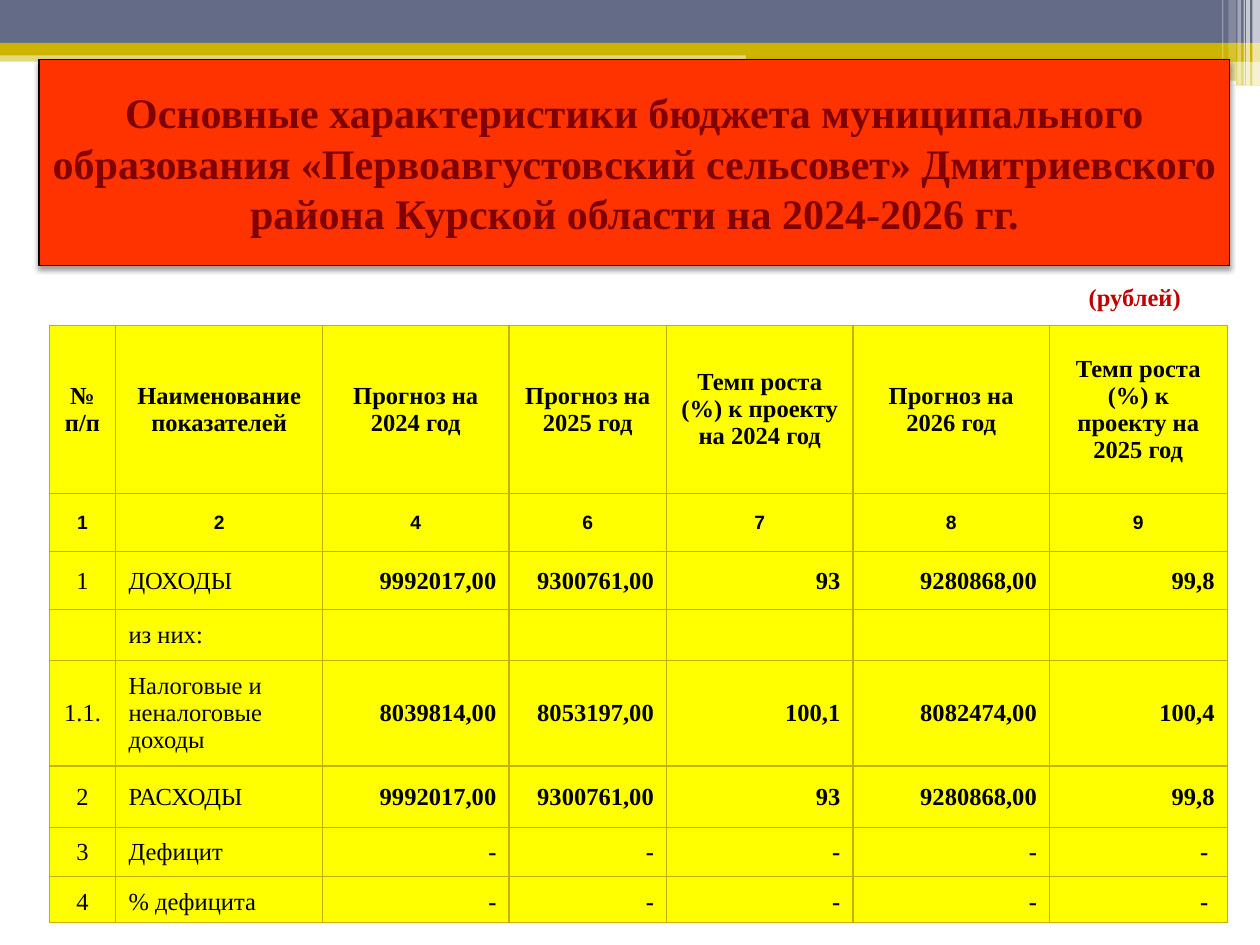
from lxml import etree
from pptx import Presentation
from pptx.dml.color import RGBColor
from pptx.enum import shapes, text
from pptx.oxml import ns
from pptx.util import Inches, Pt

SERIF = "Times New Roman"
SLATE, GOLD, WHITE, YELLOW, GRID = "646B86", "CCB400", "FFFFFF", "FFFF00", "C8B000"
LEFT, CENTER, RIGHT = text.PP_ALIGN.LEFT, text.PP_ALIGN.CENTER, text.PP_ALIGN.RIGHT

TITLE = ("Основные характеристики бюджета муниципального образования "
         "«Первоавгустовский сельсовет» Дмитриевского района Курской области на 2024-2026 гг.")
UNIT = "(рублей)"

# left, top, width, height, colour, opacity in percent
BANDS = [
    (0, 0.4, 10, 0.09, GOLD, 50),
    (0, 0, 10, 0.34, SLATE, 100),
    (0, 0.34, 10, 0.1, GOLD, 100),
    (5.92, 0.39, 4.08, 0.1, GOLD, 100),
    (5.92, 0.48, 4.08, 0.2, GOLD, 50),
    (8.06, 0.64, 1.75, 0.04, WHITE, 100),
]
# left, width, height, opacity of the white stripes in the corner
STRIPES = [
    (9.94, 0.06, 0.68, 65), (9.89, 0.03, 0.68, 65), (9.87, 0.01, 0.68, 60),
    (9.82, 0.03, 0.68, 40), (9.75, 0.06, 0.64, 20), (9.7, 0.01, 0.64, 30),
]

COLUMNS = [0.53, 1.64, 1.48, 1.25, 1.48, 1.56, 1.41]
ROW_HEIGHTS = [1.34, 0.46, 0.46, 0.39, 0.84, 0.49, 0.39, 0.36]
TOTALS = ["9992017,00", "9300761,00", "93", "9280868,00", "99,8"]
ROWS = [
    ["№ п/п", "Наименование показателей", "Прогноз на 2024 год", "Прогноз на 2025 год",
     "Темп роста (%) к проекту на 2024 год", "Прогноз на 2026 год",
     "Темп роста (%) к проекту на 2025 год"],
    ["1", "2", "4", "6", "7", "8", "9"],
    ["1", "ДОХОДЫ"] + TOTALS,
    ["", "из них:"] + [""] * 5,
    ["1.1.", "Налоговые и неналоговые доходы",
     "8039814,00", "8053197,00", "100,1", "8082474,00", "100,4"],
    ["2", "РАСХОДЫ"] + TOTALS,
    ["3", "Дефицит"] + ["-"] * 5,
    ["4", "% дефицита"] + ["-"] * 5,
]


def rgb(colour):
    return RGBColor.from_string(colour)


def paint(fill, colour):
    fill.solid()
    fill.fore_color.rgb = rgb(colour)


def write(frame, words, align, colour="000000", **font_values):
    paragraph = frame.paragraphs[0]
    paragraph.alignment = align
    run = paragraph.add_run()
    run.text = words
    run.font.color.rgb = rgb(colour)
    for name, value in font_values.items():
        setattr(run.font, name, value)


def add_band(slide, left, top, width, height, colour, opacity):
    kind = shapes.MSO_SHAPE.RECTANGLE
    band = slide.shapes.add_shape(kind, *map(Inches, (left, top, width, height)))
    band.shadow.inherit = False
    band.line.fill.background()
    paint(band.fill, colour)
    if opacity < 100:
        colour_element = band.element.find(".//" + ns.qn("a:srgbClr"))
        etree.SubElement(colour_element, ns.qn("a:alpha"), val=str(opacity * 1000))


def add_title(slide):
    title = slide.shapes.title
    title.left, title.top, title.width, title.height = map(Inches, (0.31, 0.47, 9.45, 1.64))
    paint(title.fill, "FF3300")
    title.line.color.rgb = rgb("000000")
    title.line.width = Pt(0.75)
    frame = title.text_frame
    frame.word_wrap = True
    frame.auto_size = text.MSO_AUTO_SIZE.NONE
    frame.vertical_anchor = text.MSO_ANCHOR.MIDDLE
    write(frame, TITLE, CENTER, "800000", name=SERIF, size=Pt(24), bold=True)

    effects = etree.SubElement(title.element.spPr, ns.qn("a:effectLst"))
    shadow = etree.SubElement(effects, ns.qn("a:outerShdw"), blurRad=str(Pt(3.1)),
                              dist=str(Pt(1.6)), dir=str(90 * 60000), rotWithShape="0")
    shade = etree.SubElement(shadow, ns.qn("a:srgbClr"), val="000000")
    etree.SubElement(shade, ns.qn("a:alpha"), val="38000")
    title.element.getparent().append(title.element)  # in front of the bands


def add_borders(cell):
    """Put a thin line on every side; borders must precede the fill in tcPr."""
    properties = cell._tc.get_or_add_tcPr()
    for position, side in enumerate(("a:lnL", "a:lnR", "a:lnT", "a:lnB")):
        line = etree.Element(ns.qn(side), w=str(Pt(0.75)))
        fill = etree.SubElement(line, ns.qn("a:solidFill"))
        etree.SubElement(fill, ns.qn("a:srgbClr"), val=GRID)
        properties.insert(position, line)


def add_budget_table(slide):
    area = map(Inches, (0.39, 2.58, sum(COLUMNS), sum(ROW_HEIGHTS)))
    table = slide.shapes.add_table(len(ROWS), len(COLUMNS), *area).table
    table.first_row = table.horz_banding = False
    for column, width in zip(table.columns, COLUMNS):
        column.width = Inches(width)
    for i, (row, height) in enumerate(zip(ROWS, ROW_HEIGHTS)):
        table.rows[i].height = Inches(height)
        heading = i < 2
        for j, words in enumerate(row):
            cell = table.cell(i, j)
            paint(cell.fill, YELLOW)
            add_borders(cell)
            last_row = i == len(ROWS) - 1
            cell.vertical_anchor = text.MSO_ANCHOR.BOTTOM if last_row else text.MSO_ANCHOR.MIDDLE
            if words == "-" and j == len(COLUMNS) - 1:
                cell.margin_right = Inches(0.15)
            align = CENTER if heading or j == 0 else LEFT if j == 1 else RIGHT
            write(cell.text_frame, words, align, bold=heading or j > 1,
                  name="Arial" if i == 1 else SERIF, size=Pt(11 if i == 1 else 14))


def main():
    presentation = Presentation()
    presentation.slide_width, presentation.slide_height = Inches(10), Inches(7.5)
    slide = presentation.slides.add_slide(presentation.slide_layouts[5])

    for band in BANDS:
        add_band(slide, *band)
    for left, width, height, opacity in STRIPES:
        add_band(slide, left, 0, width, height, WHITE, opacity)
    add_title(slide)

    unit = slide.shapes.add_textbox(*map(Inches, (8.3, 2.19, 1.42, 0.34))).text_frame
    unit.word_wrap = True
    unit.margin_left = Inches(0.34)
    write(unit, UNIT, LEFT, "C00000", name=SERIF, size=Pt(14), bold=True)

    add_budget_table(slide)
    presentation.save("out.pptx")


if __name__ == "__main__":
    main()
